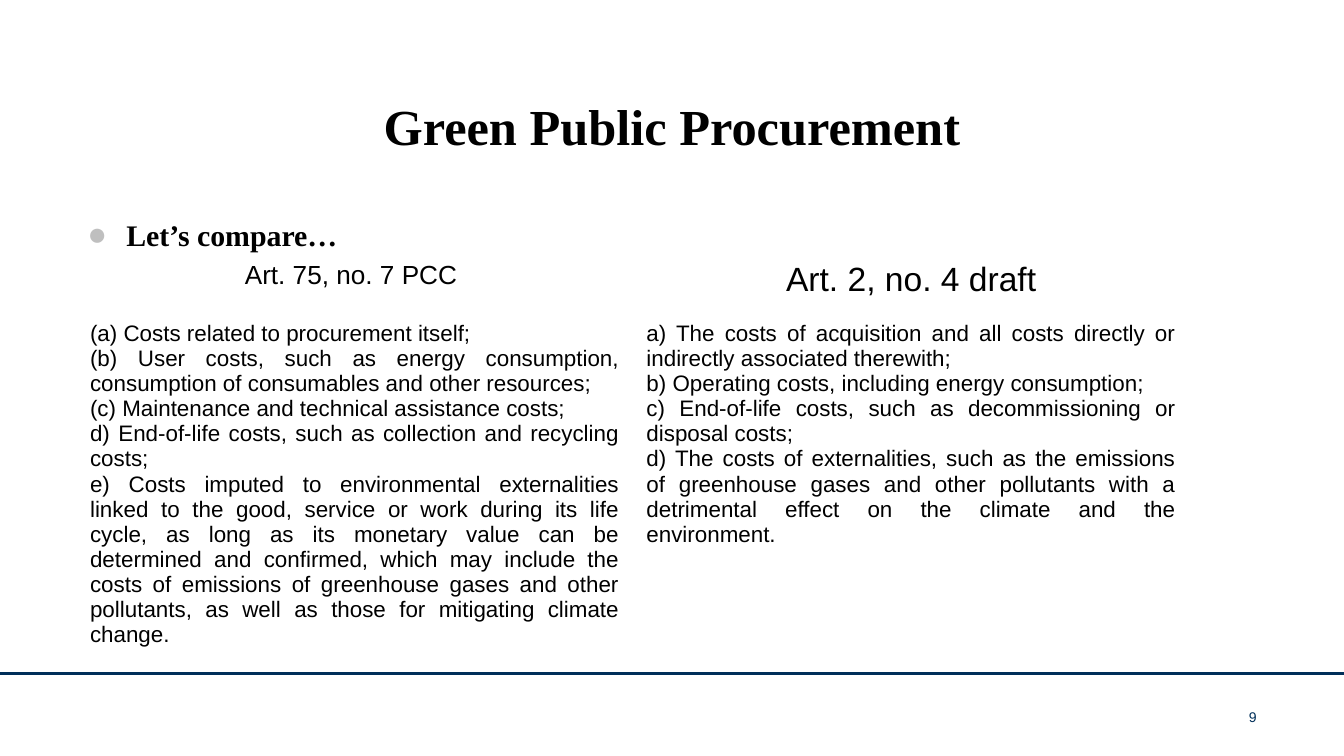
from lxml.etree import SubElement
from pptx import Presentation
from pptx.dml.color import RGBColor
from pptx.enum.shapes import MSO_CONNECTOR
from pptx.enum.text import MSO_ANCHOR, MSO_AUTO_SIZE, PP_ALIGN
from pptx.oxml.ns import qn
from pptx.util import Inches, Pt

BLACK = RGBColor(0x00, 0x00, 0x00)
NAVY = RGBColor(0x00, 0x2F, 0x59)
GREY = RGBColor(0xBF, 0xBF, 0xBF)
SERIF, SANS = "Times New Roman", "Arial"
WIDE, HIGH = Inches(10), Inches(10 * 9 / 16)
EDGE = 0.065
PLAIN = "{2D5ABB26-0587-4C30-8999-92F81FD0307C}"

HEADS = [("Art. 75, no. 7 PCC ", 14), ("Art. 2, no. 4 draft", 18)]
COSTS = [
    [
        "(a) Costs related to procurement itself;",
        "(b) User costs, such as energy consumption, consumption of consumables and other resources;",
        "(c) Maintenance and technical assistance costs;",
        "d) End-of-life costs, such as collection and recycling costs;",
        "e) Costs imputed to environmental externalities linked to the good, service or work "
        "during its life cycle, as long as its monetary value can be determined and confirmed, "
        "which may include the costs of emissions of greenhouse gases and other pollutants, "
        "as well as those for mitigating climate change.",
    ],
    [
        "a) The costs of acquisition and all costs directly or indirectly associated therewith; ",
        "b) Operating costs, including energy consumption; ",
        "c) End-of-life costs, such as decommissioning or disposal costs; ",
        "d) The costs of externalities, such as the emissions of greenhouse gases and other "
        "pollutants with a detrimental effect on the climate and the environment.",
    ],
]


def area(left, top, width, height):
    """Turn shares of the slide into lengths."""
    return int(left * WIDE), int(top * HIGH), int(width * WIDE), int(height * HIGH)


def place(shape, box):
    """Move a shape to a box."""
    shape.left, shape.top, shape.width, shape.height = box


def style(para, size, align, face=SANS, color=BLACK, bold=False):
    """Set the alignment and font of a paragraph."""
    para.alignment = align
    font = para.font
    font.name, font.size, font.bold = face, Pt(size), bold
    font.color.rgb = color


def write(frame, lines, *look, **more):
    """Fill a text frame with paragraphs of one style."""
    frame.text = "\n".join(lines)
    for para in frame.paragraphs:
        style(para, *look, **more)


def trim(frame, anchor):
    """Clear the margins and fix the anchor of a text frame."""
    frame.margin_left = frame.margin_right = frame.margin_top = frame.margin_bottom = 0
    frame.word_wrap = True
    frame.auto_size = MSO_AUTO_SIZE.NONE
    frame.vertical_anchor = anchor


def dot(para):
    """Give a paragraph a round grey bullet."""
    props = para._p.get_or_add_pPr()
    props.set("marL", str(Inches(0.29)))
    props.set("indent", str(-Inches(0.29)))
    tint = SubElement(props, qn("a:buClr"))
    SubElement(tint, qn("a:srgbClr"), val=str(GREY))
    SubElement(props, qn("a:buSzPct"), val="110000")
    SubElement(props, qn("a:buFont"), typeface=SANS)
    SubElement(props, qn("a:buChar"), char="●")


def add_rule(slide):
    """Draw the footer line across the slide."""
    level = int(0.891 * HIGH)
    rule = slide.shapes.add_connector(MSO_CONNECTOR.STRAIGHT, 0, level, WIDE, level)
    rule.line.color.rgb = NAVY
    rule.line.width = Pt(1.5)
    SubElement(rule._element.spPr, qn("a:effectLst"))


def add_title(slide):
    """Fill the title placeholder."""
    title = slide.shapes.title
    place(title, area(EDGE, 0.087, 1 - 2 * EDGE, 0.158))
    trim(title.text_frame, MSO_ANCHOR.MIDDLE)
    write(title.text_frame, ["Green Public Procurement"], 27, PP_ALIGN.CENTER, SERIF, bold=True)


def add_lead(slide):
    """Fill the body placeholder with its bulleted line."""
    body = slide.placeholders[1]
    place(body, area(EDGE, 0.263, 1 - 2 * EDGE, 0.605))
    trim(body.text_frame, MSO_ANCHOR.TOP)
    para = body.text_frame.paragraphs[0]
    para.text = "Let’s compare…"
    dot(para)
    para.line_spacing, para.space_before = 1.5, Pt(0)
    style(para, 16, PP_ALIGN.JUSTIFY, SERIF, bold=True)


def add_costs(slide):
    """Add the table that sets both lists of costs side by side."""
    box = area(0.057, 0.336, 0.828, 0.53)
    table = slide.shapes.add_table(2, 2, *box).table
    table.first_row = table.horz_banding = False
    table._tbl.tblPr.find(qn("a:tableStyleId")).text = PLAIN
    table.rows[0].height, table.rows[1].height = Inches(0.45), Inches(2.53)
    for col, ((head, size), costs) in enumerate(zip(HEADS, COSTS)):
        write(table.cell(0, col).text_frame, [head], size, PP_ALIGN.CENTER)
        write(table.cell(1, col).text_frame, costs, 12, PP_ALIGN.JUSTIFY)
        for row in range(2):
            table.cell(row, col).fill.background()


def add_page(slide):
    """Add the page number."""
    page = slide.shapes.add_textbox(*area(0.896, 0.932, 0.039, 0.032))
    trim(page.text_frame, MSO_ANCHOR.MIDDLE)
    write(page.text_frame, ["9"], 7.5, PP_ALIGN.RIGHT, color=NAVY)


def main():
    """Build and save the slide."""
    deck = Presentation()
    deck.slide_width, deck.slide_height = WIDE, HIGH
    slide = deck.slides.add_slide(deck.slide_layouts[1])
    add_rule(slide)
    add_title(slide)
    add_lead(slide)
    add_costs(slide)
    add_page(slide)
    deck.save("out.pptx")


if __name__ == "__main__":
    main()
